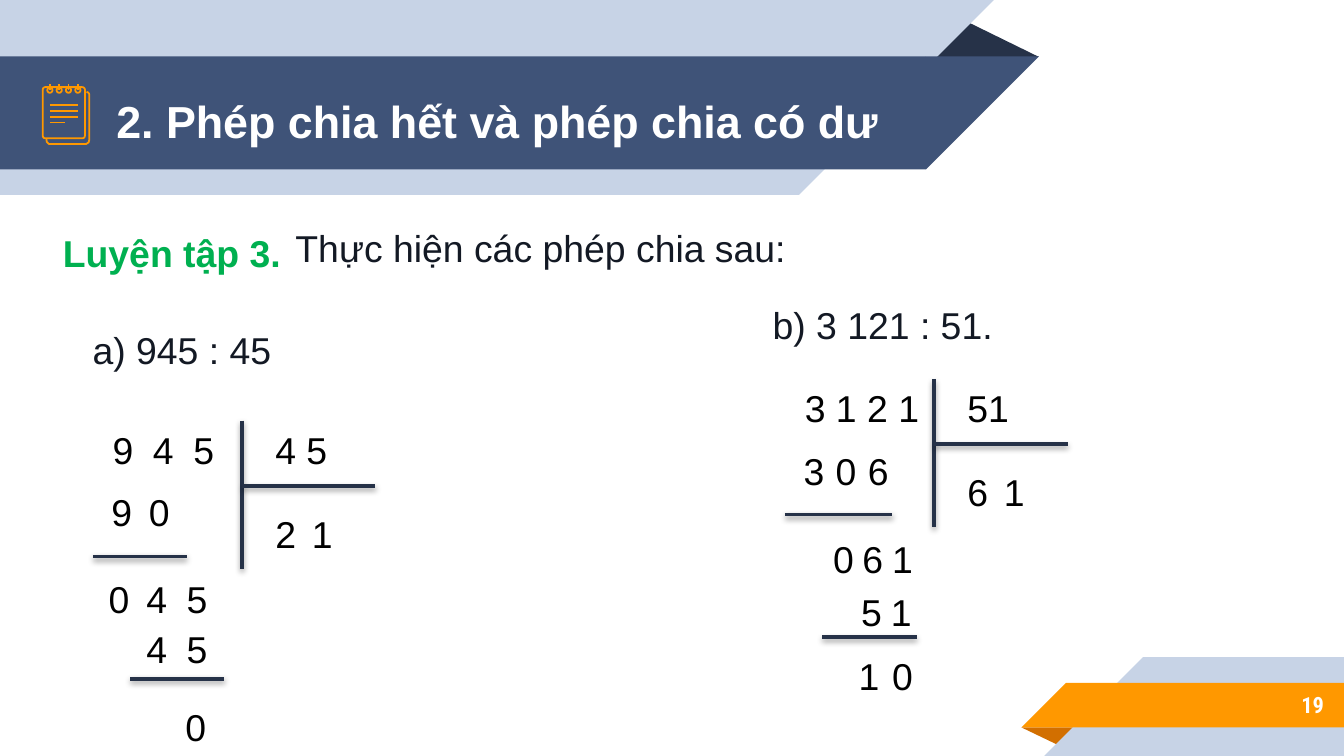
import lxml.etree
import pptx
import pptx.dml.color
import pptx.enum.shapes
import pptx.enum.text
import pptx.oxml
import pptx.oxml.ns
import pptx.util

Pt = pptx.util.Pt
SHAPE = pptx.enum.shapes.MSO_SHAPE
ALIGN = pptx.enum.text.PP_ALIGN
ANCHOR = pptx.enum.text.MSO_ANCHOR
AUTO = pptx.enum.text.MSO_AUTO_SIZE

COLORS = {"pale": "C7D3E6", "navy": "3F5378", "dark": "263248", "orange": "FF9800",
          "rust": "D26F00", "white": "FFFFFF", "green": "00B050", "ink": "131924",
          "black": "000000"}


def rgb(name):
    return pptx.dml.color.RGBColor.from_string(COLORS[name])


def block(s, kind, box, color, rot=0, flip=False, adj=None):
    """Filled preset shape without outline."""
    sp = s.shapes.add_shape(kind, *map(Pt, box))
    sp.shadow.inherit = False
    sp.fill.solid()
    sp.fill.fore_color.rgb = rgb(color)
    sp.line.fill.background()
    sp.rotation = rot
    if flip:
        sp._element.spPr.get_or_add_xfrm().set("flipH", "1")
    if adj is not None:
        sp.adjustments[0] = adj


def outline(sp):
    """Orange pen of the notepad icon."""
    sp.shadow.inherit = False
    sp.fill.background()
    sp.line.color.rgb = rgb("orange")
    sp.line.width = Pt(0.96)


def rule(s, x1, y1, x2, y2, color="dark", width=2, shadow=True):
    ln = s.shapes.add_connector(pptx.enum.shapes.MSO_CONNECTOR.STRAIGHT,
                                Pt(x1), Pt(y1), Pt(x2), Pt(y2))
    ln.line.color.rgb = rgb(color)
    ln.line.width = Pt(width)
    qn = pptx.oxml.ns.qn
    effects = lxml.etree.SubElement(ln._element.spPr, qn("a:effectLst"))
    if shadow:
        outer = lxml.etree.SubElement(effects, qn("a:outerShdw"), blurRad="40000",
                                      dist="20000", dir="5400000", rotWithShape="0")
        tint = lxml.etree.SubElement(outer, qn("a:srgbClr"), val=COLORS["black"])
        lxml.etree.SubElement(tint, qn("a:alpha"), val="38000")


def write(tf, text, size=20, color="black", bold=False, align=ALIGN.LEFT,
          spacing=None, font="Arial"):
    p = tf.paragraphs[0]
    p.alignment = align
    if spacing:
        p.line_spacing = spacing
    r = p.add_run()
    r.text = text
    r.font.name = font
    r.font.size = Pt(size)
    r.font.bold = bold
    r.font.color.rgb = rgb(color)


def label(s, box, text, wrap=True, **style):
    sp = s.shapes.add_textbox(*map(Pt, box))
    tf = sp.text_frame
    tf.word_wrap = wrap
    tf.auto_size = AUTO.SHAPE_TO_FIT_TEXT
    write(tf, text, **style)
    return tf


def header(s, x, y, w, h):
    # Fold, then two bands that end in a slanted edge
    fold = 61
    block(s, SHAPE.ISOSCELES_TRIANGLE, (x + w - fold, y + 10.3, fold, 20.2), "dark", adj=0.324)
    for top, length, height, color in ((0, 428, h, "pale"), (30.2, 496, 60.6, "navy")):
        block(s, SHAPE.RECTANGLE, (x, y + top, length, height), color, 180, True)
        block(s, SHAPE.RIGHT_TRIANGLE, (x + length, y + top, height, height), color, 180, True)
    notepad(s, x + 22.9, y + 45.2, 22.6, 32)

    # Title, raised above the bands
    title = s.shapes.title
    title.left, title.top, title.width, title.height = map(Pt, (x - 7.9, y + 32.4, 548.6, 51.1))
    tf = title.text_frame
    tf.word_wrap = True
    tf.auto_size = AUTO.NONE
    tf.vertical_anchor = ANCHOR.TOP
    write(tf, "2. Phép chia hết và phép chia có dư", 24, "white", True, ALIGN.CENTER, 1.5)
    s.shapes._spTree.append(title._element)


def notepad(s, x, y, w, h):
    # Back page
    fb = s.shapes.build_freeform(Pt(x + 2), Pt(y + 29.4), scale=1.0)
    edge = [(2.2, 30.9), (3.4, h), (w + 0.6, h), (w + 2, 31.2), (w + 2.3, 30),
            (w + 2.3, 5.2), (w + 1.8, 4.4), (w + 0.9, 4.1)]
    fb.add_line_segments([(Pt(x + dx), Pt(y + dy)) for dx, dy in edge], close=False)
    outline(fb.convert_to_shape())

    # Front page
    page = s.shapes.add_shape(SHAPE.ROUNDED_RECTANGLE, Pt(x), Pt(y + 1.5), Pt(w), Pt(27.4))
    page.adjustments[0] = 0.06
    outline(page)

    # Rings and written lines
    for i in range(4):
        cx = x + 3.8 + 5 * i
        ring = s.shapes.add_shape(SHAPE.OVAL, Pt(cx - 1.4), Pt(y + 1.7), Pt(2.8), Pt(2.8))
        outline(ring)
        rule(s, cx, y, cx, y + 3, "orange", 0.96, False)
        line_y = y + 10.9 + 3.2 * i
        rule(s, x + 3.8, line_y, x + (11.7 if i == 3 else 18.9), line_y, "orange", 0.96, False)


def footer(s, x, y, w, h):
    block(s, SHAPE.ISOSCELES_TRIANGLE, (x, y + 37.6, 30.8, 10), "rust", 180, adj=0.324)
    for left, top, height, color in ((12.3, 0, h, "pale"), (0, 13.7, 23.9, "orange")):
        block(s, SHAPE.RIGHT_TRIANGLE, (x + left, y + top, height, height), color, flip=True)
        block(s, SHAPE.RECTANGLE, (x + left + height, y + top, w - left - height, height),
              color, flip=True)

    # Slide number
    tf = label(s, (x + w - 38.2, y + 13, 34.6, 25.2), "19", size=12, color="white", bold=True,
               align=ALIGN.RIGHT, font="Roboto Condensed")
    tf.auto_size = AUTO.NONE
    tf.vertical_anchor = ANCHOR.MIDDLE
    tf.margin_top = tf.margin_bottom = Pt(7.2)


def exercise(s, x, y):
    body = {"color": "ink", "align": ALIGN.JUSTIFY, "spacing": 1.5}
    label(s, (x, y, 132.5, 43.9), "Luyện tập 3.", False, **{**body, "color": "green"}, bold=True)
    label(s, (x + 124.6, y - 2.9, 360, 38.9), "Thực hiện các phép chia sau:", **body)
    label(s, (x + 15.9, y + 51.8, 116.6, 43.9), "a) 945 : 45", **body)
    label(s, (x + 380.2, y + 38.2, 133.2, 38.9), "b) 3 121 : 51.", False, **body)


def division(s, x, y, w, h, divisor, quotient, rows, rules):
    """Long division; the box is the part right of the vertical bar."""
    rule(s, x, y, x, y + h)
    rule(s, x, y + 34.9, x + w, y + 34.9)
    label(s, (x + 10.8, y, 47.5, 31.7), divisor)
    for i, digit in enumerate(quotient):
        label(s, (x + 10.8 + 19.6 * i, y + 44.9, 47.5, 31.7), digit)

    # Working to the left of the bar
    for top, digits in rows:
        for text, dx in digits:
            label(s, (x + dx, y + top, 87 if len(text) > 1 else 47.5, 31.7), text)
    for top, start, end in rules:
        rule(s, x + start, y + top, x + end, y + top)


prs = pptx.Presentation()
prs.slide_width, prs.slide_height = Pt(720), Pt(405)
s = prs.slides.add_slide(prs.slide_layouts[5])

header(s, 0, 0, 556.6, 104.4)
footer(s, 547.2, 352.1, 172.8, 52.9)
exercise(s, 26.6, 108)
division(s, 129.6, 225.4, 71.5, 79.2, "4 5", "21",
         [(0, [("9", -76.3), ("4", -54.7), ("5", -33.1)]),
          (33.1, [("9", -77), ("0", -56.9)]),
          (79.9, [("0", -78.5), ("4", -58.3), ("5", -36.7)]),
          (106.6, [("4", -58.3), ("5", -36.7)]),
          (148.3, [("0", -37.4)])],
         [(72.7, -79.9, -29.5), (138.2, -59.8, -9.4)])
division(s, 500.4, 203, 71.5, 79.2, "51", "61",
         [(0, [("3 1 2 1", -76.3)]),
          (33.8, [("3", -77), ("0", -59.8), ("6", -42.5)]),
          (80.6, [("0", -61.2), ("6", -45.4), ("1", -29.5)]),
          (109, [("5", -46.1), ("1", -30.2)]),
          (143.6, [("1", -47.5), ("0", -29.5)])],
         [(72.7, -79.9, -22.3), (138.2, -59.8, -9.4)])

prs.save("out.pptx")
